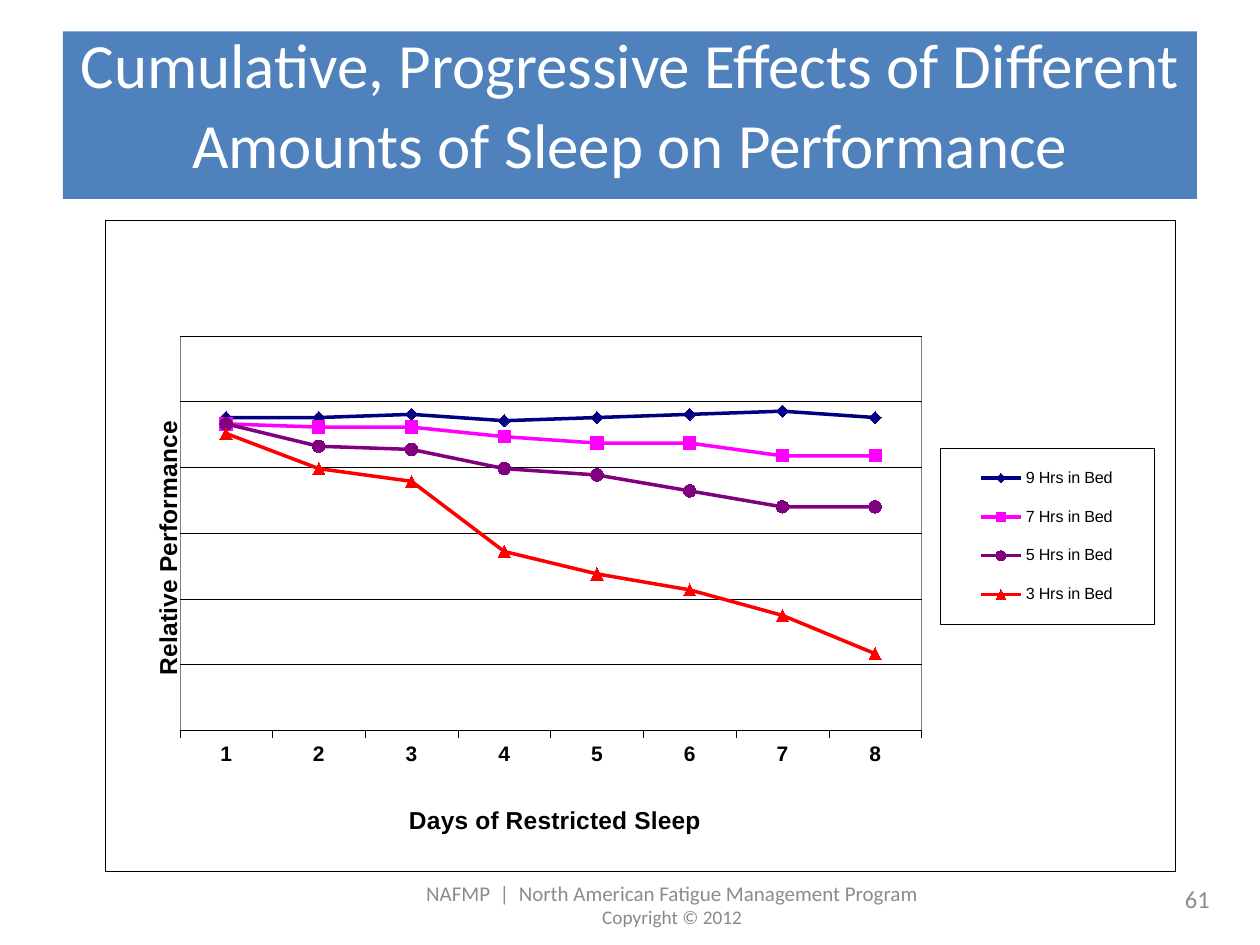
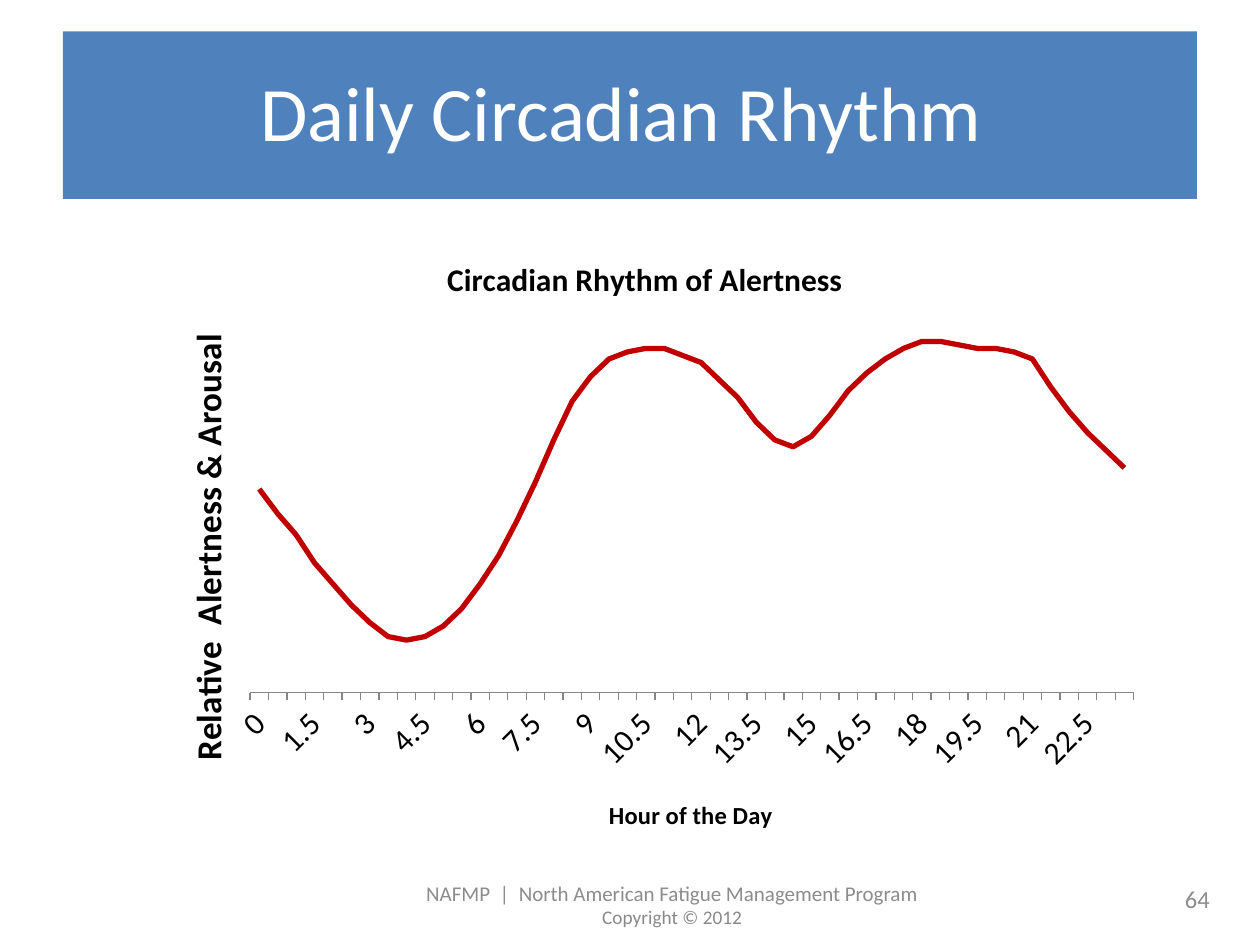
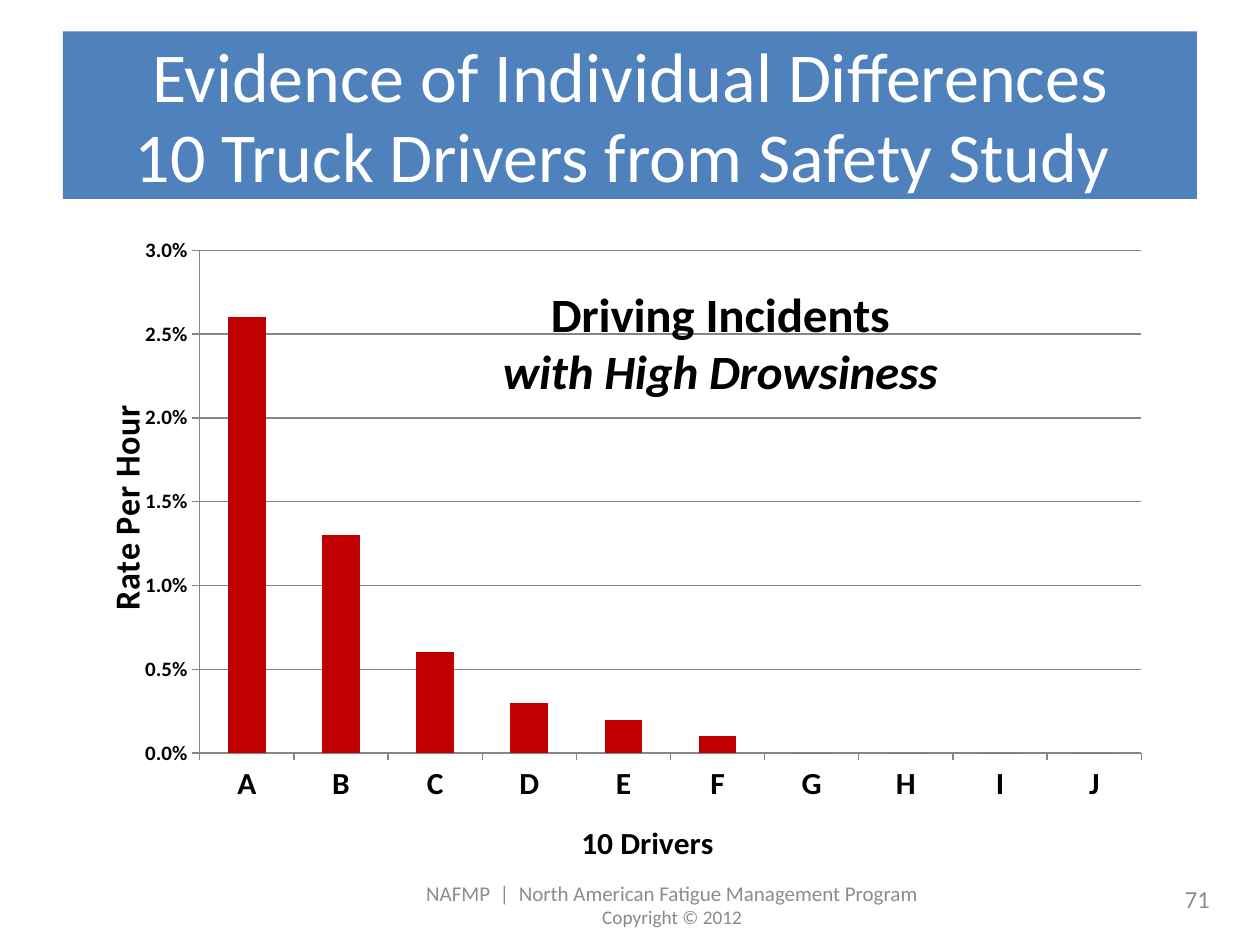
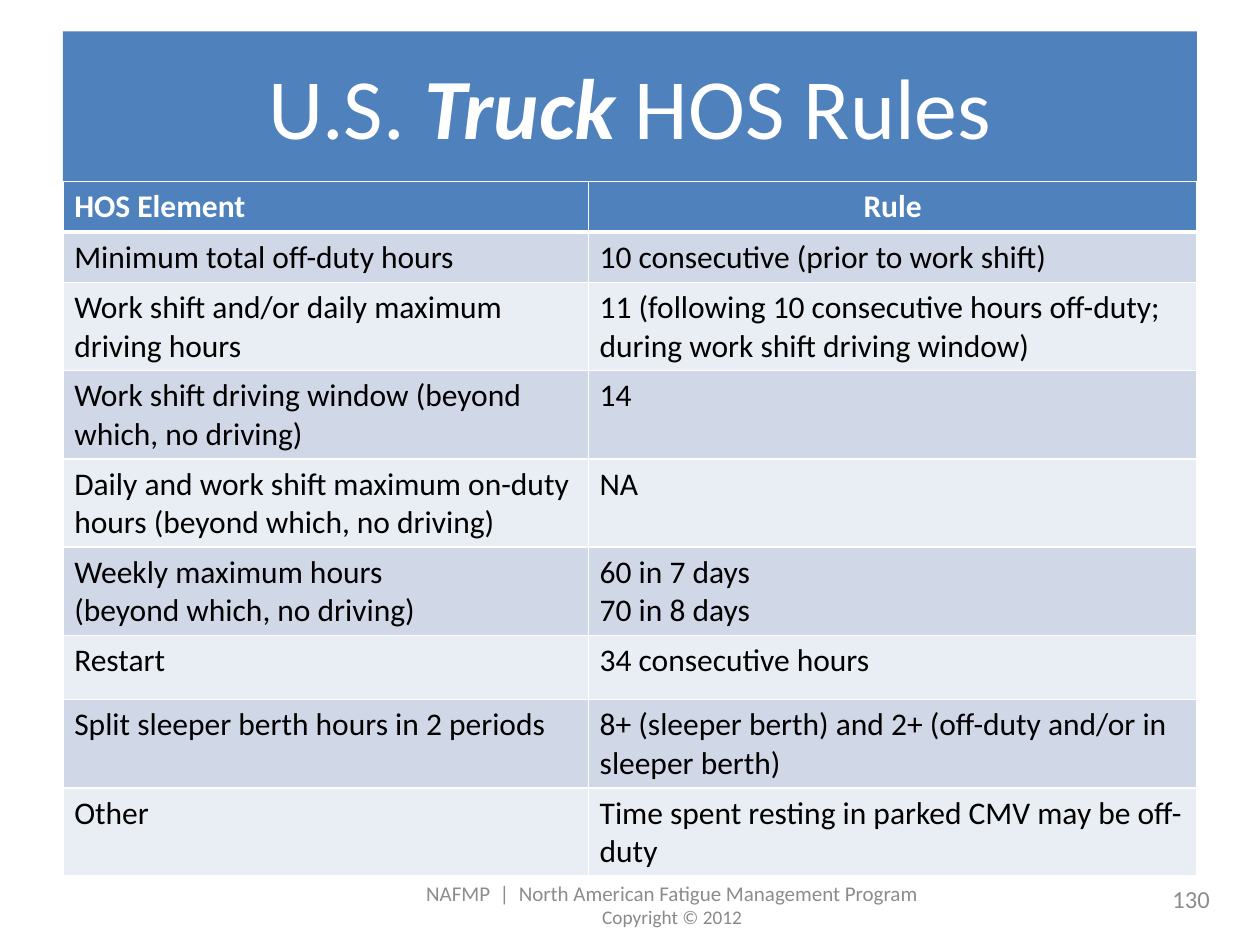
from pptx import Presentation
from pptx.chart.data import CategoryChartData
from pptx.dml.color import RGBColor
from pptx.enum.chart import (XL_CHART_TYPE, XL_LEGEND_POSITION, XL_MARKER_STYLE,
                             XL_TICK_MARK)
from pptx.enum.shapes import MSO_SHAPE
from pptx.enum.text import MSO_ANCHOR, MSO_AUTO_SIZE, PP_ALIGN
from pptx.oxml import parse_xml
from pptx.oxml.ns import nsdecls, qn
from pptx.util import Inches, Pt

LINE = XL_CHART_TYPE.LINE
LINE_MARKERS = XL_CHART_TYPE.LINE_MARKERS
COLUMN = XL_CHART_TYPE.COLUMN_CLUSTERED
LEGEND_RIGHT = XL_LEGEND_POSITION.RIGHT
DIAMOND = XL_MARKER_STYLE.DIAMOND
SQUARE = XL_MARKER_STYLE.SQUARE
CIRCLE = XL_MARKER_STYLE.CIRCLE
TRIANGLE = XL_MARKER_STYLE.TRIANGLE
TICK_OUT = XL_TICK_MARK.OUTSIDE
TICK_NONE = XL_TICK_MARK.NONE
RECTANGLE = MSO_SHAPE.RECTANGLE
MIDDLE = MSO_ANCHOR.MIDDLE
NO_AUTOFIT = MSO_AUTO_SIZE.NONE
LEFT, CENTER, RIGHT = PP_ALIGN.LEFT, PP_ALIGN.CENTER, PP_ALIGN.RIGHT

BLUE, WHITE, BLACK = "4F81BD", "FFFFFF", "000000"
GRAY, DARK_RED = "868686", "C00000"
FOOTER_GRAY, COPYRIGHT_GRAY = "8C8C8C", "898989"
BAND_COLORS = ("E9EDF4", "D0D8E8")
TITLE_ONLY = 5


def rgb(value):
    return RGBColor.from_string(value)


def box(left, top, width, height):
    return Inches(left), Inches(top), Inches(width), Inches(height)


def set_layout(parent, index, x, y, width=None, height=None, inner=False):
    for old in parent.findall(qn("c:layout")):
        parent.remove(old)
    parts = ['<c:layoutTarget val="inner"/>'] if inner else []
    parts += ['<c:xMode val="edge"/>', '<c:yMode val="edge"/>']
    sizes = (("x", x), ("y", y), ("w", width), ("h", height))
    parts += [f'<c:{name} val="{value}"/>' for name, value in sizes if value is not None]
    parent.insert(index, parse_xml(
        f'<c:layout {nsdecls("c")}><c:manualLayout>{"".join(parts)}</c:manualLayout></c:layout>'))


def frame_properties(border):
    return parse_xml(
        f'<c:spPr {nsdecls("c", "a")}><a:solidFill><a:srgbClr val="{WHITE}"/></a:solidFill>'
        f'<a:ln w="{Pt(0.25)}"><a:solidFill><a:srgbClr val="{border}"/></a:solidFill></a:ln></c:spPr>')


class Deck:
    font = "Calibri"

    def __init__(self):
        self.presentation = Presentation()
        self.presentation.slide_width = Inches(10)
        self.presentation.slide_height = Inches(7.5)
        self.layout = self.presentation.slide_layouts[TITLE_ONLY]
        self.slide = None

    def style(self, font, size, color=BLACK, bold=False, italic=False, name=None):
        font.name = name or self.font
        font.size = Pt(size)
        font.color.rgb = rgb(color)
        font.bold = bold
        font.italic = italic

    def add_run(self, paragraph, text, size, color=BLACK, **options):
        run = paragraph.add_run()
        run.text = text
        self.style(run.font, size, color, **options)

    def add_paragraphs(self, frame, lines, alignment=LEFT):
        for index, (text, size, color, options) in enumerate(lines):
            paragraph = frame.add_paragraph() if index else frame.paragraphs[0]
            paragraph.alignment = alignment
            self.add_run(paragraph, text, size, color, **options)

    def add_text(self, place, lines, alignment):
        shape = self.slide.shapes.add_textbox(*box(*place))
        frame = shape.text_frame
        frame.word_wrap = True
        frame.vertical_anchor = MIDDLE
        self.add_paragraphs(frame, lines, alignment)
        return shape

    def share_on_layout(self):
        band = self.slide.shapes.add_shape(RECTANGLE, *box(0.5, 0.25, 9, 1.33))
        band.shadow.inherit = False
        band.fill.solid()
        band.fill.fore_color.rgb = rgb(BLUE)
        band.line.fill.background()
        footer = self.add_text((3, 7.09, 4.67, 0.38), [
            ("NAFMP  |  North American Fatigue Management Program", 12, FOOTER_GRAY, {}),
            ("Copyright © 2012", 11, COPYRIGHT_GRAY, {}),
        ], CENTER)
        footer.text_frame.margin_bottom = Inches(0.25)
        tree = self.layout.shapes._spTree
        for index, shape in enumerate((band, footer)):
            shape._element.nvSpPr.cNvPr.set("id", str(100 + index))
            tree.insert(2 + index, shape._element)

    def add_slide(self, number, title_lines, size, top=0.3, margin_bottom=0.05):
        first = self.slide is None
        self.slide = self.presentation.slides.add_slide(self.layout)
        if first:
            self.share_on_layout()
        title = self.slide.shapes.title
        title.left, title.top, title.width, title.height = box(0.5, top, 9, 1.25)
        frame = title.text_frame
        frame.auto_size = NO_AUTOFIT
        frame.word_wrap = True
        frame.vertical_anchor = MIDDLE
        frame.margin_bottom = Inches(margin_bottom)
        paragraph = frame.paragraphs[0]
        paragraph.alignment = CENTER
        paragraph.line_spacing = Pt(45.8)
        for index, runs in enumerate(title_lines):
            if index:
                paragraph.add_line_break()
            for text, emphasis in runs:
                self.add_run(paragraph, text, size, WHITE, bold=emphasis, italic=emphasis)
        self.add_text((7.37, 6.93, 2.33, 0.4), [(str(number), 14, FOOTER_GRAY, {})], RIGHT)

    def add_chart(self, kind, place, categories, series, plot, name=None, number_format="General"):
        data = CategoryChartData(number_format=number_format)
        data.categories = categories
        for label, values in series:
            data.add_series(label, values)
        chart = self.slide.shapes.add_chart(kind, *box(*place), data).chart
        self.style(chart.font, 10, name=name)
        chart.has_title = False
        chart.has_legend = False
        chart.plots[0].vary_by_categories = False
        set_layout(chart._chartSpace.chart.plotArea, 0, *plot, inner=True)
        return chart

    def add_chart_title(self, owner, lines, size, position, name=None):
        title = owner.chart_title if hasattr(owner, "chart_title") else owner.axis_title
        self.add_paragraphs(title.text_frame, [
            (text, size, BLACK, {"bold": True, "italic": italic, "name": name})
            for text, italic in lines], CENTER)
        set_layout(title._element, 1, *position)
        return title

    def style_axis(self, axis, size, bold=False, color=GRAY, width=0.75, name=None):
        axis.major_tick_mark = TICK_OUT
        axis.minor_tick_mark = TICK_NONE
        self.style(axis.tick_labels.font, size, bold=bold, name=name)
        self.style_line(axis.format.line, color, width)

    def style_line(self, line, color, width):
        line.color.rgb = rgb(color)
        line.width = Pt(width)

    def set_scale(self, axis, maximum, step, grid=None, width=0.75):
        axis.minimum_scale = 0
        axis.maximum_scale = maximum
        axis.major_unit = step
        axis.has_major_gridlines = grid is not None
        if grid:
            self.style_line(axis.major_gridlines.format.line, grid, width)

    def add_legend(self, chart, position, size, name):
        chart.has_legend = True
        legend = chart.legend
        legend.position = LEGEND_RIGHT
        legend.include_in_layout = False
        self.style(legend.font, size, name=name)
        set_layout(legend._element, 1, *position)
        legend._element.find(qn("c:txPr")).addprevious(frame_properties(BLACK))

    def style_line_series(self, series, color, width, marker=None):
        series.smooth = False
        self.style_line(series.format.line, color, width)
        if marker is not None:
            series.marker.style = marker
            series.marker.size = 7
            series.marker.format.fill.solid()
            series.marker.format.fill.fore_color.rgb = rgb(color)
            self.style_line(series.marker.format.line, color, 0.75)

    def add_table(self, place, widths, heights, rows):
        table = self.slide.shapes.add_table(len(rows), len(widths), *box(*place)).table
        table.horz_banding = False
        for column, width in zip(table.columns, widths):
            column.width = Inches(width)
        for row, height in zip(table.rows, heights):
            row.height = Inches(height)
        for row_index, texts in enumerate(rows):
            header = row_index == 0
            for column_index, text in enumerate(texts):
                cell = table.cell(row_index, column_index)
                cell.margin_left = cell.margin_right = Inches(0.09)
                cell.margin_top = cell.margin_bottom = Inches(0.05)
                color = WHITE if header else BLACK
                lines = [(line, 18, color, {"bold": header}) for line in text.split("\n")]
                self.add_paragraphs(cell.text_frame, lines,
                                    CENTER if header and column_index else LEFT)
                self.add_borders(cell, 3 if row_index == 0 else 1, 3 if row_index == 1 else 1)
                cell.fill.solid()
                cell.fill.fore_color.rgb = rgb(BLUE if header else BAND_COLORS[row_index % 2])

    def add_borders(self, cell, bottom, top):
        properties = cell._tc.get_or_add_tcPr()
        for tag, width in (("lnL", 1), ("lnR", 1), ("lnT", top), ("lnB", bottom)):
            properties.append(parse_xml(
                f'<a:{tag} {nsdecls("a")} w="{Pt(width)}"><a:solidFill>'
                f'<a:srgbClr val="{WHITE}"/></a:solidFill></a:{tag}>'))


def build_sleep_slide(deck):
    deck.add_slide(61, [[("Cumulative, Progressive Effects of Different "
                          "Amounts of Sleep on Performance", False)]],
                   36, top=0.5, margin_bottom=0.69)
    sleep_series = [
        ("9 Hrs in Bed", (98, 98, 99, 97, 98, 99, 100, 98), "000080", DIAMOND),
        ("7 Hrs in Bed", (96, 95, 95, 92, 90, 90, 86, 86), "FF00FF", SQUARE),
        ("5 Hrs in Bed", (96, 89, 88, 82, 80, 75, 70, 70), "800080", CIRCLE),
        ("3 Hrs in Bed", (93, 82, 78, 56, 49, 44, 36, 24), "FF0000", TRIANGLE),
    ]
    chart = deck.add_chart(LINE_MARKERS, (0.83, 1.75, 8.5, 5.17),
                           [str(day) for day in range(1, 9)],
                           [entry[:2] for entry in sleep_series],
                           (0.07, 0.177, 0.693, 0.606), name="Arial")
    for series, (_, _, color, marker) in zip(chart.plots[0].series, sleep_series):
        deck.style_line_series(series, color, 2, marker)
    deck.style_axis(chart.category_axis, 12, True, BLACK, 0.25, "Arial")
    deck.set_scale(chart.value_axis, 123.6, 20.6, BLACK, 0.25)
    chart.value_axis.visible = False
    deck.add_chart_title(chart.category_axis, [("Days of Restricted Sleep", False)], 14,
                         (0.28, 0.89), "Arial")
    deck.add_chart_title(chart.value_axis, [("Relative Performance", False)], 14,
                         (0.04, 0.3), "Arial")
    deck.add_legend(chart, (0.78, 0.35, 0.2, 0.27), 9.2, "Arial")
    chart._chartSpace.chart.plotArea.append(frame_properties("808080"))
    chart._chartSpace.chart.addnext(frame_properties(BLACK))


def build_circadian_slide(deck):
    deck.add_slide(64, [[("Daily Circadian Rhythm ", False)]], 44)
    alertness = (58, 51, 45, 37, 31, 25, 20, 16, 15, 16, 19, 24, 31, 39, 49, 60,
                 72, 83, 90, 95, 97, 98, 98, 96, 94, 89, 84, 77, 72, 70, 73, 79,
                 86, 91, 95, 98, 100, 100, 99, 98, 98, 97, 95, 87, 80, 74, 69, 64)
    hours = [f"{index / 2:g}" for index in range(len(alertness))]
    chart = deck.add_chart(LINE, (1.08, 1.75, 8.08, 5), hours, [("Series 1", alertness)],
                           (0.112, 0.192, 0.868, 0.558), number_format="0.0")
    deck.style_line_series(chart.plots[0].series[0], DARK_RED, 3)
    hour_axis = chart.category_axis
    deck.style_axis(hour_axis, 18)
    hour_axis._element.find(qn("c:txPr")).find(qn("a:bodyPr")).set("rot", "-2700000")
    hour_axis._element.find(qn("c:noMultiLvlLbl")).addprevious(
        parse_xml(f'<c:tickLblSkip {nsdecls("c")} val="3"/>'))
    deck.set_scale(chart.value_axis, 100, 20)
    chart.value_axis.visible = False
    chart.has_title = True
    deck.add_chart_title(chart, [("Circadian Rhythm of Alertness", False)], 18, (0.3, 0.05))
    deck.add_chart_title(hour_axis, [("Hour of the Day", False)], 14, (0.46, 0.91))
    deck.add_chart_title(chart.value_axis, [("Relative  Alertness & Arousal", False)], 20,
                         (0.04, 0.17))


def build_drivers_slide(deck):
    deck.add_slide(71, [[("Evidence of Individual Differences", False)],
                        [("10 Truck Drivers from Safety Study ", False)]], 40)
    rates = (0.026, 0.013, 0.006, 0.003, 0.002, 0.001, 0, 0, 0, 0)
    chart = deck.add_chart(COLUMN, (0.58, 1.67, 8.67, 5.25), list("ABCDEFGHIJ"),
                           [("Series 1", rates)], (0.116, 0.062, 0.862, 0.78),
                           number_format="0.0%")
    plot = chart.plots[0]
    plot.gap_width = 150
    bars = plot.series[0]
    bars.invert_if_negative = False
    bars.format.fill.solid()
    bars.format.fill.fore_color.rgb = rgb(DARK_RED)
    deck.style_axis(chart.category_axis, 18, True)
    rate_axis = chart.value_axis
    deck.style_axis(rate_axis, 12, True)
    deck.set_scale(rate_axis, 0.03, 0.005, GRAY)
    rate_axis.tick_labels.number_format = "0.0%"
    rate_axis.tick_labels.number_format_is_linked = False
    chart.has_title = True
    title = deck.add_chart_title(chart, [("Driving Incidents", False),
                                         ("with High Drowsiness", True)], 28, (0.39, 0.11))
    title._element.find(qn("c:overlay")).set("val", "1")
    deck.add_chart_title(chart.category_axis, [("10 Drivers", False)], 18, (0.46, 0.94))
    deck.add_chart_title(rate_axis, [("Rate Per Hour", False)], 20, (0.02, 0.3))


def build_rules_slide(deck):
    deck.add_slide(130, [[("U.S. ", False), ("Truck", True), (" HOS Rules", False)]], 49)
    deck.add_table((0.5, 1.44, 9, 5.29), (4.17, 4.83),
                   (0.38, 0.38, 0.67, 0.67, 0.67, 0.67, 0.51, 0.67, 0.67), [
        ("HOS Element", "Rule"),
        ("Minimum total off-duty hours", "10 consecutive (prior to work shift)"),
        ("Work shift and/or daily maximum driving hours",
         "11 (following 10 consecutive hours off-duty; during work shift driving window)"),
        ("Work shift driving window (beyond which, no driving)", "14"),
        ("Daily and work shift maximum on-duty hours (beyond which, no driving)", "NA"),
        ("Weekly maximum hours\n(beyond which, no driving)", "60 in 7 days\n70 in 8 days"),
        ("Restart", "34 consecutive hours"),
        ("Split sleeper berth hours in 2 periods",
         "8+ (sleeper berth) and 2+ (off-duty and/or in sleeper berth)"),
        ("Other", "Time spent resting in parked CMV may be off-duty"),
    ])


def main():
    deck = Deck()
    build_sleep_slide(deck)
    build_circadian_slide(deck)
    build_drivers_slide(deck)
    build_rules_slide(deck)
    deck.presentation.save("out.pptx")


if __name__ == "__main__":
    main()
